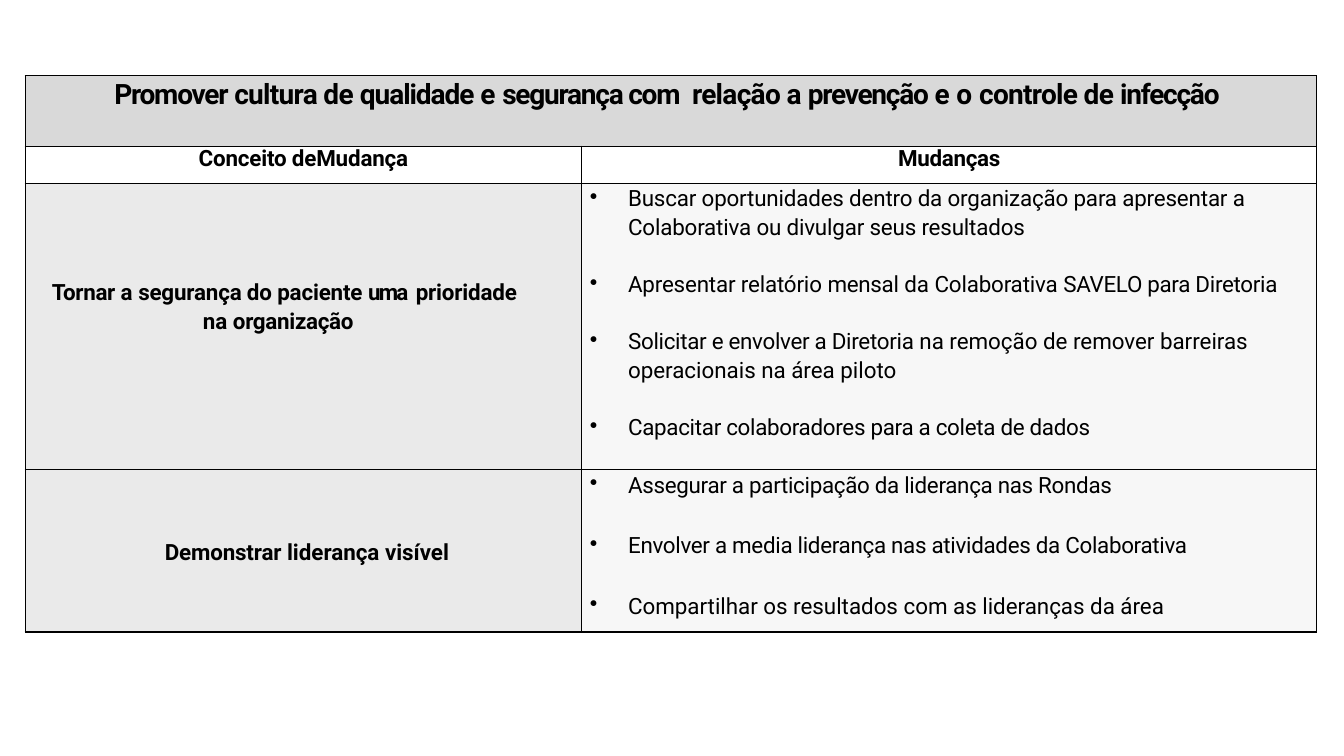
"""Build a slide with a table of change concepts and their changes."""
import pptx
import pptx.dml.color
import pptx.enum.text
import pptx.oxml
import pptx.oxml.ns
import pptx.util

Inches = pptx.util.Inches
Pt = pptx.util.Pt
Align = pptx.enum.text.PP_ALIGN

THEME = {
    "font": "Roboto", "ink": "000000", "line": 1,
    "head": "D9D9D9", "plain": "FFFFFF", "side": "EAEAEA", "list": "F7F7F7",
    "large": 20, "body": 16,
}

HEAD = [[
    ("Promover ", -0.9), ("cultura de ", -0.5), ("qualidade ", -0.8), ("e ", -0.1),
    ("segurança com  ", -0.9), ("relação a ", -0.5), ("prevenção ", -0.9),
    ("e o ", -0.1), ("controle de ", -0.5), ("infecção", -0.9),
]]
LABELS = [[[("Conceito deMudança", -0.1)]], [[("Mudanças", -0.2)]]]
CONCEPTS = [
    [[("Tornar ", -0.2), ("a ", 0), ("segurança do paciente ", -0.1), ("uma  ", -1.3),
      ("prioridade ", -0.1), ("n", -1.6), ("a ", 0), ("organização", -0.2)]],
    [[("Demonstrar ", -0.1), ("liderança visível", 0)]],
]
CHANGES = [
    [
        [("Buscar oportunidades dentro da organização para apresentar a "
          "Colaborativa ou divulgar seus resultados", -0.1)],
        [("Apresentar relatório ", -0.1), ("mensal ", -0.2), ("da ", 0),
         ("Colaborativa ", -0.1), ("SAVELO para Diretoria", -0.2)],
        [("Solicitar e envolver a Diretoria ", -0.2),
         ("na remoção de remover barreiras operacionais na área piloto", 0)],
        [("Capacitar colaboradores para a coleta de dados", -0.2)],
    ],
    [
        [("Assegurar a participação da liderança nas Rondas", -0.2)],
        [("Envolver a media liderança nas atividades da Colaborativa", -0.2)],
        [("Compartilhar os resultados com as lideranças da área", 0)],
    ],
]

PLACE = (0.25, 0.75)
COLS = (5.52, 7.29)
ROWS = (0.7, 0.37, 2.84, 1.61)

BASE = {"fill": "plain", "size": "body", "bold": True, "align": Align.CENTER,
        "top": 0, "lead": 1.0, "first": 0, "gap": 0, "dot": False,
        "dent": {"marL": 0, "marR": 0, "indent": 0}}
TITLE = BASE | {"fill": "head", "size": "large", "top": 0.05, "lead": Pt(22.1),
                "first": 3.2, "dent": {"marL": 0.18, "marR": 0.26, "indent": 0}}
LABEL = BASE | {"first": 0.1}
SIDES = [
    BASE | {"fill": "side", "top": 0.93, "lead": 1.11,
            "dent": {"marL": 0.07, "marR": 0.57, "indent": 0.12}},
    BASE | {"fill": "side", "top": 0.7,
            "dent": {"marL": 0.07, "marR": 0, "indent": 0}},
]
LIST = BASE | {"fill": "list", "bold": False, "align": Align.LEFT, "dot": True,
               "dent": {"marL": 0.46, "marR": 0, "indent": -0.38}}
LISTS = [LIST | {"lead": 1.1, "first": 0.3, "gap": 20.5},
         LIST | {"lead": 1.11, "first": 0.9, "gap": 22.6}]


def assign(thing, values):
    """Set each named attribute on an object."""
    for name, value in values.items():
        setattr(thing, name, value)


def color(name):
    """Return a theme colour."""
    return pptx.dml.color.RGBColor.from_string(THEME[name])


def border(cell):
    """Draw a line on every edge of a cell."""
    props = cell._tc.get_or_add_tcPr()
    for edge in "LRTB":
        props.append(pptx.oxml.parse_xml(
            f'<a:ln{edge} {pptx.oxml.ns.nsdecls("a")} w="{Pt(THEME["line"])}">'
            f'<a:solidFill><a:srgbClr val="{THEME["ink"]}"/></a:solidFill></a:ln{edge}>'))


def write(cell, paras, form):
    """Fill a cell with formatted paragraphs."""
    cell.fill.solid()
    cell.fill.fore_color.rgb = color(form["fill"])
    assign(cell, {"margin_left": 0, "margin_right": 0, "margin_bottom": 0,
                  "margin_top": Inches(form["top"]),
                  "vertical_anchor": pptx.enum.text.MSO_ANCHOR.TOP})
    frame = cell.text_frame
    for spot, runs in enumerate(paras):
        para = frame.add_paragraph() if spot else frame.paragraphs[0]
        assign(para, {"alignment": form["align"], "line_spacing": form["lead"],
                      "space_before": Pt(form["gap"] if spot else form["first"])})
        props = para._p.get_or_add_pPr()
        for name, value in form["dent"].items():
            props.set(name, str(Inches(value)))
        if form["dot"]:
            props.append(pptx.oxml.parse_xml(
                f'<a:buChar {pptx.oxml.ns.nsdecls("a")} char="•"/>'))
        for text, space in runs:
            run = para.add_run()
            run.text = text
            assign(run.font, {"name": THEME["font"], "size": Pt(THEME[form["size"]]),
                              "bold": form["bold"]})
            run.font.color.rgb = color("ink")
            run._r.get_or_add_rPr().set("spc", str(round(space * 100)))


def main():
    """Lay out the table and save the deck."""
    deck = pptx.Presentation()
    assign(deck, {"slide_width": Inches(13.33), "slide_height": Inches(7.5)})
    slide = deck.slides.add_slide(deck.slide_layouts[6])
    box = [Inches(n) for n in (*PLACE, sum(COLS), sum(ROWS))]
    table = slide.shapes.add_table(len(ROWS), len(COLS), *box).table
    assign(table, {"first_row": False, "horz_banding": False})
    for col, width in zip(table.columns, COLS):
        col.width = Inches(width)
    for row, height in zip(table.rows, ROWS):
        row.height = Inches(height)
    for cell in table.iter_cells():
        border(cell)
    table.cell(0, 0).merge(table.cell(0, 1))
    write(table.cell(0, 0), HEAD, TITLE)
    for col, label in enumerate(LABELS):
        write(table.cell(1, col), label, LABEL)
    for row, (name, items, side, form) in enumerate(
            zip(CONCEPTS, CHANGES, SIDES, LISTS), 2):
        write(table.cell(row, 0), name, side)
        write(table.cell(row, 1), items, form)
    deck.save("out.pptx")


if __name__ == "__main__":
    main()
